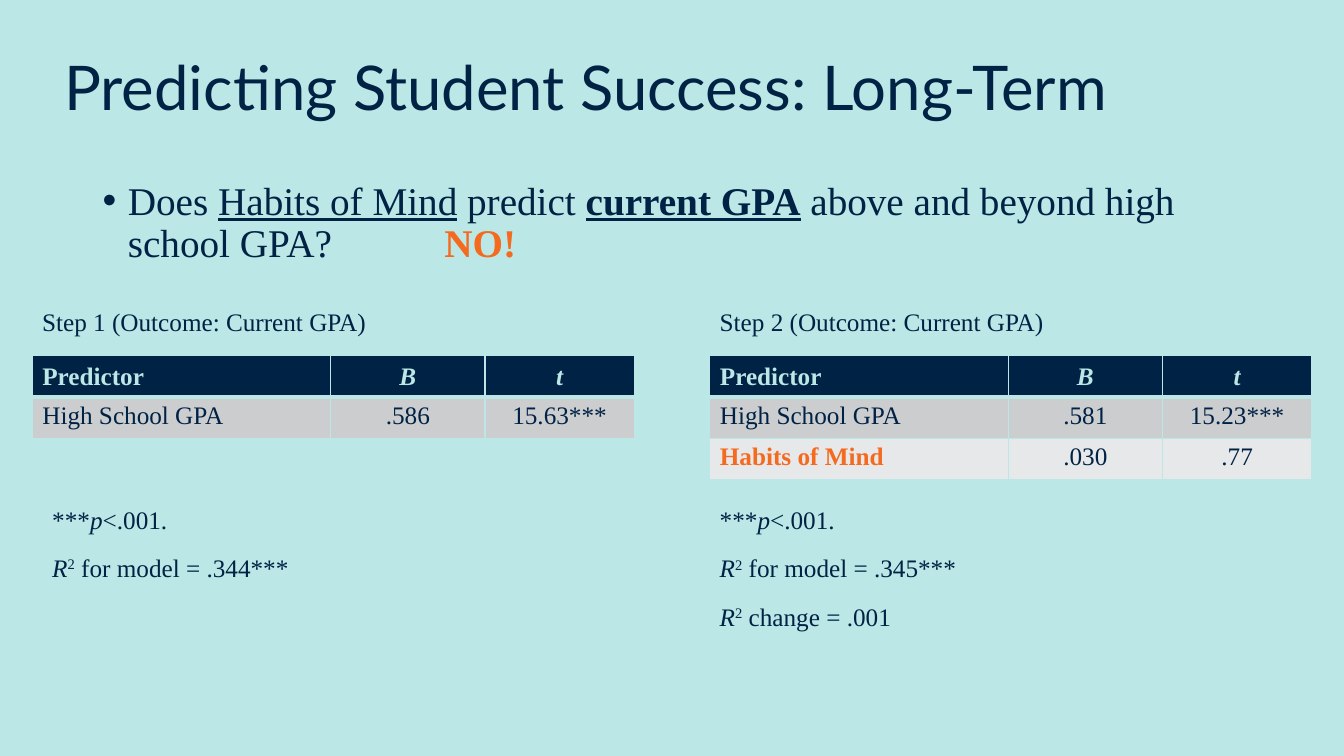
from lxml import etree
from pptx import Presentation
from pptx.dml.color import RGBColor
from pptx.enum import text as t
from pptx.oxml import ns
from pptx.util import Inches, Pt

# Content: a run is (text, marks); b bold, i italic, u underline, s superscript, o orange
TITLE = "Predicting Student Success: Long-Term"
ASK = [("Does ", ""), ("Habits of Mind", "u"), (" predict ", ""),
       ("current GPA", "bu"), (" above and beyond high school GPA?", "")]
REPLY = [("NO!", "bo")]
HEAD = [("Predictor", "b"), ("B", "bi"), ("t", "bi")]
SIG = [("***", ""), ("p", "i"), ("<.001.", "")]


def fit(tail):
    return [("R", "i"), ("2", "s"), (tail, "")]


STEPS = [
    dict(left=0.32, note=0.42, label="Step 1 (Outcome: Current GPA)",
         rows=[[("High School GPA", ""), (".586", ""), ("15.63***", "")]],
         notes=[SIG, fit(" for model = .344***")]),
    dict(left=7.04, note=7.04, label="Step 2 (Outcome: Current GPA)",
         rows=[[("High School GPA", ""), (".581", ""), ("15.23***", "")],
               [("Habits of Mind", "bo"), (".030", ""), (".77", "")]],
         notes=[SIG, fit(" for model = .345***"), fit(" change = .001")]),
]

# Look
HUE = dict(back="BBE7E6", navy="002244", orange="F46A1F", odd="CCCDCF", even="E7E8E9")
SERIF = "Times New Roman"
COLS = [2.96, 1.53, 1.48]
ROW = 0.41

deck = Presentation()
deck.slide_width, deck.slide_height = Inches(13.33), Inches(7.5)
slide = deck.slides.add_slide(deck.slide_layouts[6])


def paint(fill, hue):
    fill.solid()
    fill.fore_color.rgb = RGBColor.from_string(HUE[hue])


def write(para, runs, size=18, face=SERIF, hue="navy"):
    para.font.size, para.font.name = Pt(size), face
    for words, marks in runs:
        run = para.add_run()
        run.text = words
        font = run.font
        font.bold, font.italic, font.underline = ("b" in marks, "i" in marks, "u" in marks)
        tone = "orange" if "o" in marks else hue
        font.color.rgb = RGBColor.from_string(HUE[tone])
        if "s" in marks:
            font._element.set("baseline", "30000")


def box(left, top, width, height):
    frame = slide.shapes.add_textbox(*map(Inches, (left, top, width, height))).text_frame
    frame.word_wrap = True
    return frame


def edge(cell, sides):
    props = cell._tc.get_or_add_tcPr()
    for side, width in sides.items():
        line = etree.SubElement(props, ns.qn("a:ln" + side), w=str(Pt(width)))
        fill = etree.SubElement(line, ns.qn("a:solidFill"))
        etree.SubElement(fill, ns.qn("a:srgbClr"), val=HUE["back"])


def grid(left, top, rows):
    table = slide.shapes.add_table(len(rows), len(COLS), Inches(left), Inches(top),
                                   Inches(sum(COLS)), Inches(ROW * len(rows))).table
    table.first_row = table.horz_banding = False
    for col, width in zip(table.columns, COLS):
        col.width = Inches(width)
    for r, row in enumerate(rows):
        for c, run in enumerate(row):
            cell = table.cell(r, c)
            edge(cell, dict(L=1, R=1, T=3 if r == 1 else 1, B=1 if r else 3))
            paint(cell.fill, ("odd" if r % 2 else "even") if r else "navy")
            if r == 0:
                cell.vertical_anchor = t.MSO_ANCHOR.MIDDLE
            para = cell.text_frame.paragraphs[0]
            if c:
                para.alignment = t.PP_ALIGN.CENTER
            write(para, [run], hue="navy" if r else "back")


# Background and title
paint(slide.background.fill, "back")
frame = box(0.54, 0.17, 11.5, 1.45)
frame.vertical_anchor = t.MSO_ANCHOR.MIDDLE
frame.paragraphs[0].line_spacing = 0.9
write(frame.paragraphs[0], [(TITLE, "")], 44, "Lato")

# Question and reply
para = box(0.92, 1.75, 11.5, 1.1).paragraphs[0]
para.line_spacing = 0.9
props = para._p.get_or_add_pPr()
props.set("marL", str(Inches(0.25)))
props.set("indent", str(-Inches(0.25)))
etree.SubElement(props, ns.qn("a:buFont"), typeface="Arial")
etree.SubElement(props, ns.qn("a:buChar"), char="•")
write(para, ASK, 28)
write(box(4.31, 2.12, 1.2, 0.57).paragraphs[0], REPLY, 28)

# Steps: label, table and notes
for step in STEPS:
    write(box(step["left"], 2.99, sum(COLS), ROW).paragraphs[0], [(step["label"], "")])
    grid(step["left"], 3.53, [HEAD] + step["rows"])
    frame = box(step["note"], 4.95, 5.5, 0.47 * len(step["notes"]))
    for n, runs in enumerate(step["notes"]):
        para = frame.add_paragraph() if n else frame.paragraphs[0]
        if n:
            para.space_before = Pt(13)
        write(para, runs)

deck.save("out.pptx")
